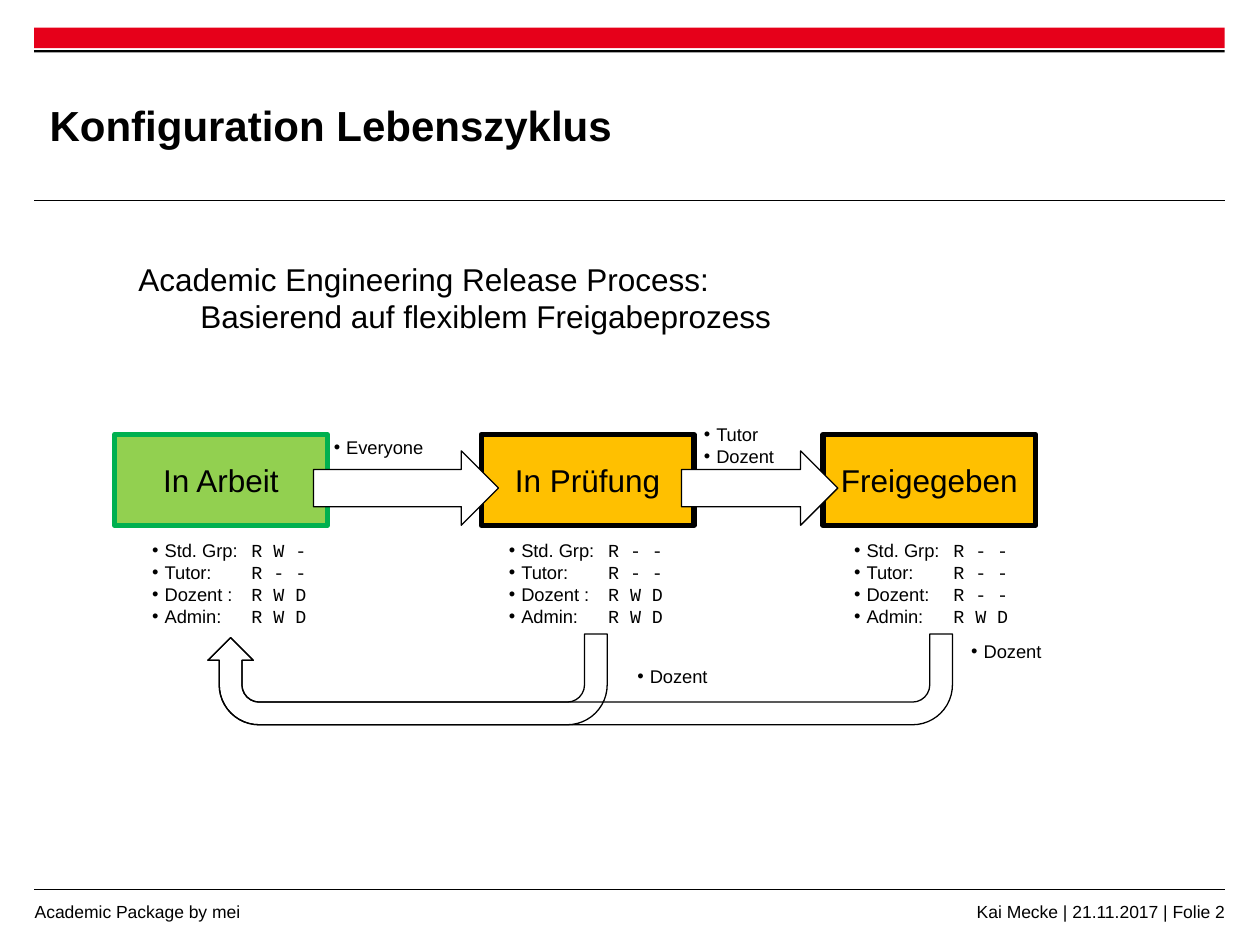
from pptx import Presentation
from pptx.dml.color import RGBColor
from pptx.enum.shapes import MSO_CONNECTOR, MSO_SHAPE
from pptx.enum.text import MSO_ANCHOR, PP_ALIGN
from pptx.oxml.ns import qn
from pptx.util import Cm, Pt
from lxml.etree import SubElement

COLORS = {"black": "000000", "white": "FFFFFF", "red": "E6001A",
          "lime": "92D050", "green": "00B050", "amber": "FFC000"}
SANS, MONO = "Arial", "Courier New"
SIDES = ("margin_left", "margin_top", "margin_right", "margin_bottom")


def tint(name):
    return RGBColor.from_string(COLORS[name])


class Painter:
    def __init__(self, deck):
        self.slide = deck.slides.add_slide(deck.slide_layouts[5])
        self.shapes = self.slide.shapes

    def assign(self, target, **values):
        for key, value in values.items():
            setattr(target, key, value)

    def label(self, par, text, size, face=SANS, bold=False):
        run = par.add_run()
        run.text = text
        self.assign(run.font, size=Pt(size), name=face, bold=bold)
        run.font.color.rgb = tint("black")

    def title(self, text, left, top, width, height):
        shape = self.shapes.title
        self.assign(shape, left=Cm(left), top=Cm(top),
                    width=Cm(width), height=Cm(height))
        frame = shape.text_frame
        self.assign(frame, vertical_anchor=MSO_ANCHOR.MIDDLE, word_wrap=True,
                    **dict.fromkeys(SIDES, 0))
        par = frame.paragraphs[0]
        par.alignment = PP_ALIGN.LEFT
        self.label(par, text, 24, bold=True)

    def shape(self, kind, left, top, width, height, fill=None, line=None,
              weight=0.75):
        shape = self.shapes.add_shape(kind, Cm(left), Cm(top),
                                      Cm(width), Cm(height))
        shape.shadow.inherit = False
        if fill:
            shape.fill.solid()
            shape.fill.fore_color.rgb = tint(fill)
        else:
            shape.fill.background()
        if line:
            shape.line.color.rgb = tint(line)
            shape.line.width = Pt(weight)
        else:
            shape.line.fill.background()
        return shape

    def state(self, text, left, fill, line):
        shape = self.shape(MSO_SHAPE.RECTANGLE, left, 8.76, 4.29, 1.83,
                           fill, line, 3)
        self.assign(shape.text_frame, vertical_anchor=MSO_ANCHOR.MIDDLE,
                    word_wrap=True)
        par = shape.text_frame.paragraphs[0]
        par.alignment = PP_ALIGN.CENTER
        self.label(par, text, 18)

    def u_turn(self, width):
        shape = self.shape(MSO_SHAPE.U_TURN_ARROW, 4.19, 12.78, width, 1.83,
                           line="black")
        shape.rotation = 180
        for i, value in enumerate((0.25, 0.25, 0.25, 0.44, 0.96)):
            shape.adjustments[i] = value

    def rule(self, top):
        line = self.shapes.add_connector(MSO_CONNECTOR.STRAIGHT, Cm(0.69),
                                         Cm(top), Cm(24.69), Cm(top))
        line.line.color.rgb = tint("black")
        line.line.width = Pt(0.6)
        SubElement(line._element.spPr, qn("a:effectLst"))

    def frame(self, left, top, width, height, **values):
        box = self.shapes.add_textbox(Cm(left), Cm(top), Cm(width), Cm(height))
        self.assign(box.text_frame, **{"word_wrap": True, **values})
        return box.text_frame

    def footer(self, text, left, align):
        frame = self.frame(left, 18.16, 6.32, 0.58, **dict.fromkeys(SIDES, 0))
        par = frame.paragraphs[0]
        par.alignment = align
        self.label(par, text, 10)

    def tab(self, par, stop):
        tabs = SubElement(par._p.get_or_add_pPr(), qn("a:tabLst"))
        SubElement(tabs, qn("a:tab"), pos=str(Cm(stop)), algn="l")

    def intro(self, first, second):
        par = self.frame(2.54, 5.11, 13.39, 1.8, word_wrap=False).paragraphs[0]
        self.tab(par, 1.25)
        self.label(par, first, 18)
        par.add_line_break()
        self.label(par, "\t" + second, 18)

    def bullets(self, rows, left, top, width, height,
                anchor=MSO_ANCHOR.MIDDLE):
        frame = self.frame(left, top, width, height, vertical_anchor=anchor)
        for i, (name, rights) in enumerate(rows):
            par = frame.add_paragraph() if i else frame.paragraphs[0]
            props = par._p.get_or_add_pPr()
            props.set("marL", str(Cm(0.25)))
            props.set("indent", str(-Cm(0.25)))
            SubElement(props, qn("a:buFont"), typeface=SANS)
            SubElement(props, qn("a:buChar"), char="•")
            if rights:
                self.tab(par, 2)
                self.label(par, name + "\t", 10.5)
                self.label(par, rights, 10.5, MONO)
            else:
                self.label(par, name, 10.5)


def main():
    deck = Presentation()
    deck.slide_width, deck.slide_height = Cm(25.4), Cm(19.05)
    pen = Painter(deck)

    pen.shape(MSO_SHAPE.RECTANGLE, 0.69, 0.56, 24, 0.41, "red")
    pen.shape(MSO_SHAPE.RECTANGLE, 0.69, 1.01, 24, 0.05, "black")
    for top in (4.04, 17.93):
        pen.rule(top)
    pen.footer("Academic Package by mei", 0.7, PP_ALIGN.LEFT)
    pen.footer("Kai Mecke | 21.11.2017 | Folie 2", 18.37, PP_ALIGN.RIGHT)
    pen.title("Konfiguration Lebenszyklus", 1, 1.35, 19.1, 2.31)
    pen.intro("Academic Engineering Release Process: ",
              "Basierend auf flexiblem Freigabeprozess")

    for text, left, fill, line in (("In Arbeit", 2.31, "lime", "green"),
                                   ("In Prüfung", 9.7, "amber", "black"),
                                   ("Freigegeben", 16.59, "amber", "black")):
        pen.state(text, left, fill, line)
    for left, width in ((6.32, 3.73), (13.74, 3.15)):
        pen.shape(MSO_SHAPE.RIGHT_ARROW, left, 9.09, width, 1.5,
                  "white", "black")

    read, full = "R - -", "R W D"
    for left, third, rights in (
            (2.82, "Dozent : ", ("R W -", read, full, full)),
            (10.01, "Dozent : ", (read, read, full, full)),
            (16.97, "Dozent: ", (read, read, read, full))):
        names = ("Std. Grp: ", "Tutor:", third, "Admin: ")
        pen.bullets(zip(names, rights), left, 10.72, 4.44, 2.06)

    for width in (8.05, 15.01):
        pen.u_turn(width)

    tutor, teacher = ("Tutor", None), ("Dozent", None)
    pen.bullets([teacher], 12.6, 12.83, 2.36, 1.14, MSO_ANCHOR.BOTTOM)
    pen.bullets([teacher], 19.33, 12.78, 2.08, 0.71)
    pen.bullets([tutor, teacher], 13.94, 8.41, 2.24, 1.14)
    pen.bullets([("Everyone", None)], 6.48, 8.66, 2.34, 0.71)
    deck.save("out.pptx")


if __name__ == "__main__":
    main()
